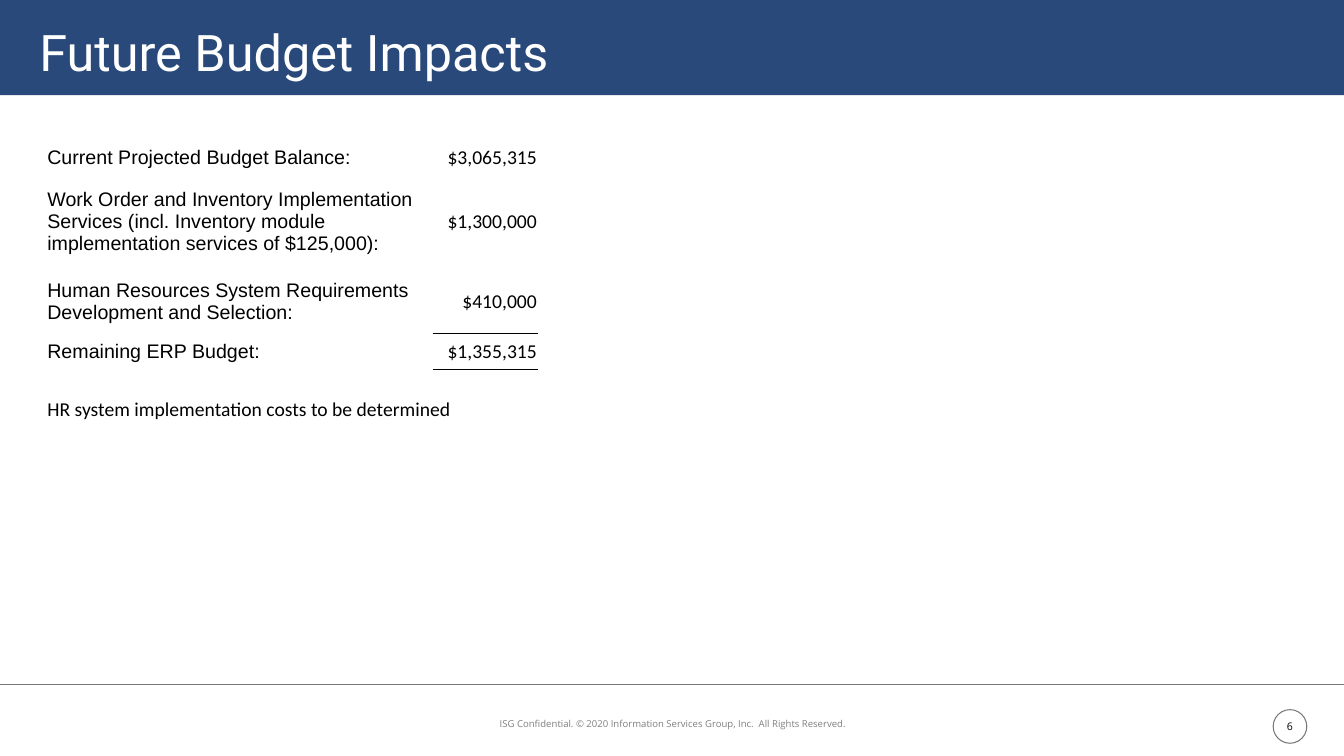
import pptx
import pptx.util
import pptx.dml.color
import pptx.enum.shapes
import pptx.enum.text
import pptx.oxml
import pptx.oxml.ns
from lxml import etree

Pt = pptx.util.Pt
ALIGN = pptx.enum.text.PP_ALIGN
ANCHOR = pptx.enum.text.MSO_ANCHOR
SHAPE = pptx.enum.shapes.MSO_SHAPE
WIDTH, HEIGHT = 960, 540
COLORS = {"navy": "29497B", "grey": "75787B", "muted": "7F7F7F", "black": "000000", "white": "FFFFFF"}
NO_GRID_STYLE = "{2D5ABB26-0587-4C30-8999-92F81FD0307C}"
BUDGET_ROWS = [
    (25.2, "Current Projected Budget Balance:", "$3,065,315"),
    (67, "Work Order and Inventory Implementation Services (incl. Inventory module "
         "implementation services of $125,000):", "$1,300,000"),
    (46.8, "Human Resources System Requirements Development and Selection:", "$410,000"),
    (25.2, "Remaining ERP Budget:", "$1,355,315"),
    (18.7, "", ""),
    (18.7, "HR system implementation costs to be determined", ""),
]
TOTAL_ROW, NOTE_ROW = 3, 5


def color(name):
    return pptx.dml.color.RGBColor.from_string(COLORS[name])


def write(frame, text, size, font, tint, align=ALIGN.LEFT):
    para = frame.paragraphs[0]
    para.alignment = align
    span = para.add_run()
    span.text = text
    span.font.size = Pt(size)
    span.font.name = font
    span.font.color.rgb = color(tint)


def set_margins(item, left, top, right, bottom):
    item.margin_left, item.margin_top = Pt(left), Pt(top)
    item.margin_right, item.margin_bottom = Pt(right), Pt(bottom)


def add_header(page, left, top, width, height):
    band = page.shapes.add_shape(SHAPE.RECTANGLE, Pt(left), Pt(top), Pt(width), Pt(height))
    band.shadow.inherit = False
    band.fill.solid()
    band.fill.fore_color.rgb = color("navy")
    band.line.fill.background()
    title = page.shapes.title
    title.left, title.top = Pt(left + 28.1), Pt(top + 10.8)
    title.width, title.height = Pt(871.2), Pt(51.1)
    frame = title.text_frame
    frame.auto_size = pptx.enum.text.MSO_AUTO_SIZE.NONE
    frame.vertical_anchor = ANCHOR.MIDDLE
    set_margins(frame, 0, 0, 0, 0)
    write(frame, "Future Budget Impacts", 36, "Roboto", "white")
    band._element.addnext(title._element)


def add_border(cell, side):
    border = pptx.oxml.parse_xml(
        f'<a:{side} {pptx.oxml.ns.nsdecls("a")} w="{Pt(0.5)}"><a:solidFill>'
        f'<a:srgbClr val="{COLORS["black"]}"/></a:solidFill></a:{side}>')
    cell._tc.get_or_add_tcPr().insert(0, border)


def fill_cell(cell, text, font, align, anchor):
    cell.fill.background()
    cell.vertical_anchor = anchor
    set_margins(cell, 0.72, 0.72, 0.72, 0)
    if text:
        write(cell.text_frame, text, 14, font, "black", align)
    else:
        end = etree.SubElement(cell.text_frame.paragraphs[0]._p, pptx.oxml.ns.qn("a:endParaRPr"))
        end.set("sz", "1400")


def add_budget_table(page, left, top, width, height):
    graphic = page.shapes.add_table(len(BUDGET_ROWS), 2, Pt(left), Pt(top), Pt(width), Pt(height))
    table = graphic.table
    table.first_row = table.horz_banding = False
    table._tbl.tblPr.find(pptx.oxml.ns.qn("a:tableStyleId")).text = NO_GRID_STYLE
    amount_width = 75.2
    table.columns[0].width = Pt(width - amount_width)
    table.columns[1].width = Pt(amount_width)
    for index, (row_height, label, amount) in enumerate(BUDGET_ROWS):
        table.rows[index].height = Pt(row_height)
        is_note = index == NOTE_ROW
        anchor = ANCHOR.BOTTOM if is_note else ANCHOR.MIDDLE
        label_font = "Calibri" if is_note else "Arial"
        fill_cell(table.cell(index, 0), label, label_font, ALIGN.LEFT, anchor)
        fill_cell(table.cell(index, 1), amount, "Calibri", ALIGN.RIGHT, anchor)
    table.cell(NOTE_ROW, 0).merge(table.cell(NOTE_ROW, 1))
    add_border(table.cell(TOTAL_ROW - 1, 1), "lnB")
    add_border(table.cell(TOTAL_ROW, 1), "lnT")


def add_footer(page, left, top, width):
    rule = page.shapes.add_connector(
        pptx.enum.shapes.MSO_CONNECTOR.STRAIGHT, Pt(left), Pt(top), Pt(left + width), Pt(top))
    rule.line.color.rgb = color("grey")
    rule.line.width = Pt(0.75)
    etree.SubElement(rule._element.spPr, pptx.oxml.ns.qn("a:effectLst"))

    notice = page.shapes.add_textbox(Pt(left + 254.2), Pt(top + 20.1), Pt(452.9), Pt(15.1))
    notice.text_frame.word_wrap = True
    set_margins(notice.text_frame, 7.2, 3.6, 7.2, 3.6)
    write(notice.text_frame, "ISG Confidential. © 2020 Information Services Group, Inc.  All Rights Reserved.",
          6.8, "Open Sans", "muted", ALIGN.CENTER)

    badge = page.shapes.add_shape(SHAPE.OVAL, Pt(left + 909.4), Pt(top + 18), Pt(24), Pt(24))
    badge.shadow.inherit = False
    badge.fill.background()
    badge.line.color.rgb = color("grey")
    badge.line.width = Pt(0.75)
    badge.text_frame.vertical_anchor = ANCHOR.MIDDLE
    set_margins(badge.text_frame, 0, 0, 0, 0)
    write(badge.text_frame, "6", 7.5, "Open Sans", "black", ALIGN.CENTER)


def main():
    deck = pptx.Presentation()
    deck.slide_width, deck.slide_height = Pt(WIDTH), Pt(HEIGHT)
    page = deck.slides.add_slide(deck.slide_layouts[5])
    add_header(page, 0, 0, WIDTH, 67.9)
    add_budget_table(page, 33.1, 99.4, 351.2, sum(row[0] for row in BUDGET_ROWS))
    add_footer(page, 0, 488.9, WIDTH)
    deck.save("out.pptx")


if __name__ == "__main__":
    main()
